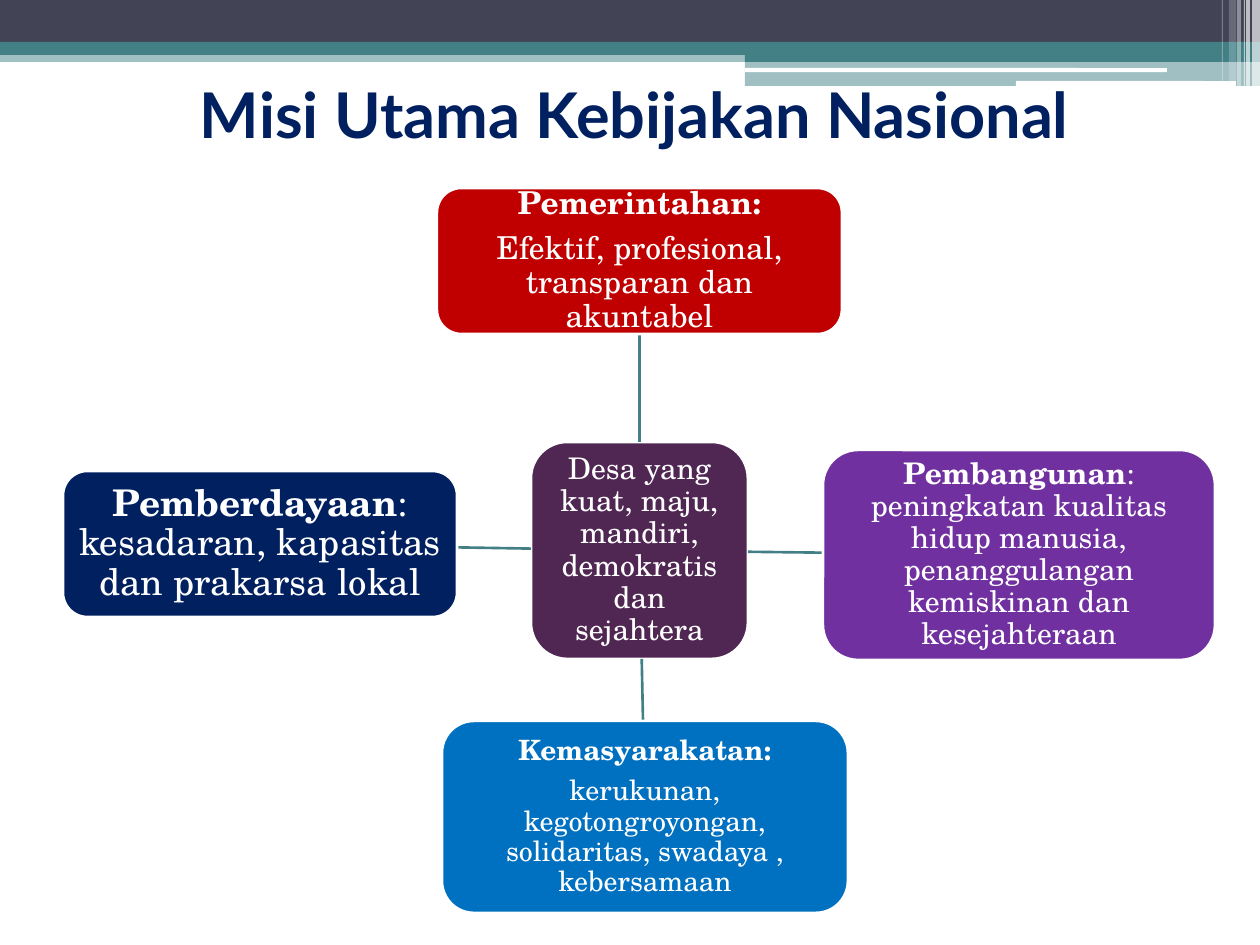
from dataclasses import dataclass
from lxml.etree import SubElement
from pptx import Presentation
from pptx.dml.color import RGBColor
from pptx.enum.shapes import MSO_CONNECTOR, MSO_SHAPE
from pptx.enum.text import MSO_ANCHOR, PP_ALIGN
from pptx.oxml.ns import qn
from pptx.util import Pt

SCALE = 914400 / 126


@dataclass(frozen=True)
class Theme:
    dark: str = "424456"
    teal: str = "438086"
    white: str = "FFFFFF"
    navy: str = "002060"
    plum: str = "502652"
    red: str = "C00000"
    violet: str = "7030A0"
    blue: str = "0070C0"
    head: str = "Lato"
    body: str = "TeX Gyre Schola"
    title: int = 36
    large: int = 21
    medium: int = 18
    normal: int = 17
    small: int = 16
    line: float = 1.5


THEME = Theme()


def emu(px):
    return round(px * SCALE)


def place(box, left, top, width, height):
    return box[0] + left, box[1] + top, width, height


def block(slide, box, color, alpha=100, kind=MSO_SHAPE.RECTANGLE):
    shape = slide.shapes.add_shape(kind, *map(emu, box))
    shape.shadow.inherit = False
    shape.fill.solid()
    shape.fill.fore_color.rgb = RGBColor.from_string(color)
    shape.line.fill.background()
    if alpha < 100:
        tint = shape.fill._xPr.find(qn("a:solidFill"))[0]
        SubElement(tint, qn("a:alpha")).set("val", str(alpha * 1000))
    return shape


def style(run, font, size, color, bold):
    run.font.name = font
    run.font.size = Pt(size)
    run.font.color.rgb = RGBColor.from_string(color)
    run.font.bold = bold


def header(slide, box):
    bars = [
        (0, 50, 1260, 12, THEME.teal, 50),
        (0, 0, 1260, 43, THEME.dark, 100),
        (0, 42, 1260, 13, THEME.teal, 100),
        (745, 49, 515, 13, THEME.teal, 100),
        (745, 61, 515, 25, THEME.teal, 50),
    ]
    pills = [(745, 68, 422, 4), (1016, 81, 220, 5)]
    stripes = [
        (1252, 8, 86, 65),
        (1246, 4, 86, 65),
        (1244, 1, 86, 60),
        (1237, 4, 86, 40),
        (1229, 7, 81, 20),
        (1222, 1, 81, 30),
    ]
    for *area, color, alpha in bars:
        block(slide, place(box, *area), color, alpha)
    for area in pills:
        block(slide, place(box, *area), THEME.white, kind=MSO_SHAPE.ROUNDED_RECTANGLE)
    for left, width, height, alpha in stripes:
        block(slide, place(box, left, 0, width, height), THEME.white, alpha)


def title(slide, box, text):
    frame = slide.shapes.add_textbox(*map(emu, box)).text_frame
    frame.word_wrap = True
    frame.vertical_anchor = MSO_ANCHOR.MIDDLE
    frame.text = text
    para = frame.paragraphs[0]
    para.alignment = PP_ALIGN.CENTER
    style(para.runs[0], THEME.head, THEME.title, THEME.navy, True)


def node(slide, box, color, size, inset, paras):
    shape = block(slide, box, color, kind=MSO_SHAPE.ROUNDED_RECTANGLE)
    shape.line.color.rgb = RGBColor.from_string(THEME.white)
    shape.line.width = Pt(THEME.line)
    frame = shape.text_frame
    frame.word_wrap = True
    frame.vertical_anchor = MSO_ANCHOR.MIDDLE
    frame.margin_left = frame.margin_right = emu(inset)
    frame.margin_top = frame.margin_bottom = emu(inset)
    for index, parts in enumerate(paras):
        para = frame.add_paragraph() if index else frame.paragraphs[0]
        para.alignment = PP_ALIGN.CENTER
        para.line_spacing = 0.9
        para.space_after = Pt(round(size * 0.35))
        for text, bold in parts:
            run = para.add_run()
            run.text = text
            style(run, THEME.body, size, THEME.white, bold)


def center(box):
    left, top, width, height = box
    return left + width / 2, top + height / 2


def edge(box, goal):
    x, y = center(box)
    dx, dy = goal[0] - x, goal[1] - y
    part = min(size / 2 / abs(step) for size, step in zip(box[2:], (dx, dy)) if step)
    return x + dx * part, y + dy * part


def link(slide, start, end):
    ends = edge(start, center(end)) + edge(end, center(start))
    line = slide.shapes.add_connector(MSO_CONNECTOR.STRAIGHT, *map(emu, ends))
    line.line.color.rgb = RGBColor.from_string(THEME.teal)
    line.line.width = Pt(THEME.line)
    SubElement(line._element.spPr, qn("a:effectLst"))


def diagram(slide, box):
    hub = place(box, 468, 254, 217, 217)
    arms = [
        ((374, 0, 405, 146), THEME.red, THEME.medium, 6, [
            [("Pemerintahan:", True)],
            [("Efektif, profesional, transparan dan akuntabel", False)],
        ]),
        ((760, 262, 392, 210), THEME.violet, THEME.normal, 6, [
            [("Pembangunan", True),
             (": peningkatan kualitas hidup manusia, penanggulangan "
              "kemiskinan dan kesejahteraan", False)],
        ]),
        ((379, 533, 406, 192), THEME.blue, THEME.small, 5, [
            [("Kemasyarakatan:", True)],
            [("kerukunan, kegotongroyongan, solidaritas, swadaya , kebersamaan", False)],
        ]),
        ((0, 283, 394, 146), THEME.navy, THEME.large, 7, [
            [("Pemberdayaan", True), (": kesadaran, kapasitas dan prakarsa lokal", False)],
        ]),
    ]
    goal = "Desa yang kuat, maju, mandiri, demokratis dan sejahtera"
    node(slide, hub, THEME.plum, THEME.normal, 6, [[(goal, False)]])
    for area, *look in arms:
        spot = place(box, *area)
        link(slide, hub, spot)
        node(slide, spot, *look)


def main():
    deck = Presentation()
    deck.slide_width, deck.slide_height = emu(1260), emu(945)
    slide = deck.slides.add_slide(deck.slide_layouts[6])
    header(slide, (0, 0, 1260, 86))
    title(slide, (63, 69, 1143, 88), "Misi Utama Kebijakan Nasional")
    diagram(slide, (63, 188, 1152, 725))
    deck.save("out.pptx")


if __name__ == "__main__":
    main()
